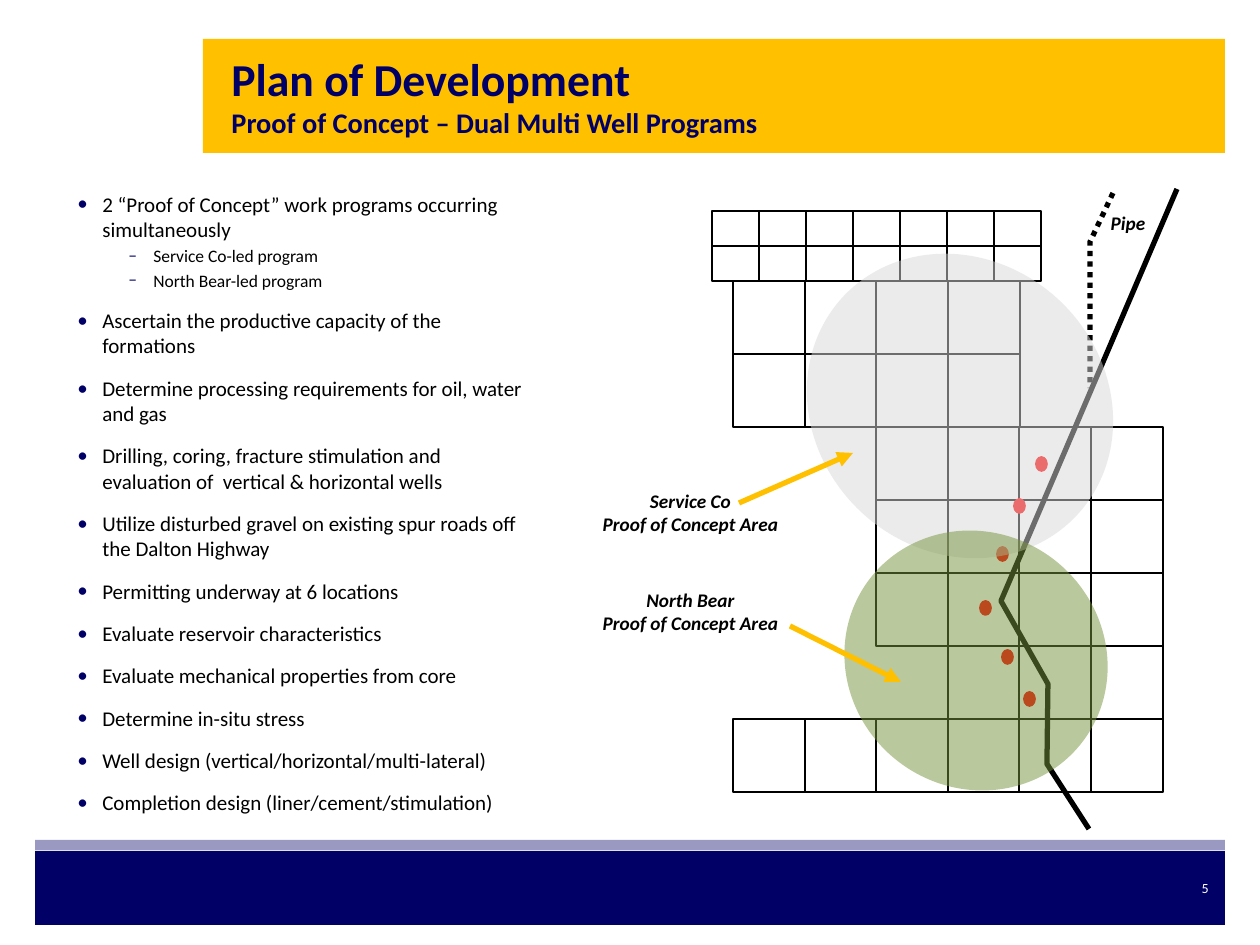
from lxml.etree import SubElement
from pptx import Presentation
from pptx.dml.color import RGBColor
from pptx.enum.dml import MSO_LINE
from pptx.enum.shapes import MSO_CONNECTOR, MSO_SHAPE
from pptx.enum.text import MSO_ANCHOR, PP_ALIGN
from pptx.oxml.ns import qn
from pptx.util import Pt

PX = 914400 / 126
NAVY = RGBColor(0x00, 0x00, 0x66)
GOLD = RGBColor(0xFF, 0xC0, 0x00)
WHITE = RGBColor(0xFF, 0xFF, 0xFF)
BLACK = RGBColor(0x00, 0x00, 0x00)
RED = RGBColor(0xFF, 0x00, 0x00)
GREY = RGBColor(0xD9, 0xD9, 0xD9)
GREEN = RGBColor(0x77, 0x93, 0x3C)

BULLETS = [
    (0, "2 “Proof of Concept” work programs occurring simultaneously"),
    (1, "Service Co-led program"),
    (1, "North Bear-led program"),
    (0, "Ascertain the productive capacity of the formations"),
    (0, "Determine processing requirements for oil, water and gas"),
    (0, "Drilling, coring, fracture stimulation and evaluation of  vertical & horizontal wells"),
    (0, "Utilize disturbed gravel on existing spur roads off the Dalton Highway"),
    (0, "Permitting underway at 6 locations"),
    (0, "Evaluate reservoir characteristics"),
    (0, "Evaluate mechanical properties from core"),
    (0, "Determine in-situ stress"),
    (0, "Well design (vertical/horizontal/multi-lateral)"),
    (0, "Completion design (liner/cement/stimulation)"),
]
LEASE_ROWS = [
    (0, 1, 2, 3), (0, 1, 2, 3), (2, 3, 4, 5), (2, 3, 4, 5),
    (2, 3, 4, 5), (3, 4, 5), (0, 1, 2, 3, 4, 5),
]
WELLS = [(1014, 499), (997, 547), (980, 601), (1002, 650), (1024, 692), (1036, 457)]
PIPELINE = [(1177, 189), (1001, 601), (1048, 684), (1047, 764), (1089, 829)]
DOTTED_ROUTE = [(1113, 193), (1090, 242), (1090, 388)]


def emu(*lengths):
    """Turn px lengths into EMU."""
    return [round(n * PX) for n in lengths]


def add_shape(shapes, kind, box, fill=None, line=None, alpha=None, rotation=0):
    """Add a preset shape with an optional fill, outline and opacity in percent."""
    sp = shapes.add_shape(kind, *emu(*box))
    sp.shadow.inherit = False
    sp.rotation = rotation
    if fill is None:
        sp.fill.background()
    else:
        sp.fill.solid()
        sp.fill.fore_color.rgb = fill
    if alpha is not None:
        color = sp.fill._xPr.find(qn("a:solidFill"))[0]
        SubElement(color, qn("a:alpha"), val=str(alpha * 1000))
    if line is None:
        sp.line.fill.background()
    else:
        sp.line.color.rgb = line
        sp.line.width = Pt(1)
    return sp


def add_route(shapes, points, dash=None):
    """Add an open black route through the points."""
    builder = shapes.build_freeform(*points[0], scale=PX)
    builder.add_line_segments(points[1:], close=False)
    sp = builder.convert_to_shape()
    sp.shadow.inherit = False
    sp.fill.background()
    sp.line.color.rgb = BLACK
    sp.line.width = Pt(3)
    if dash is not None:
        sp.line.dash_style = dash


def add_arrow(shapes, *ends):
    """Add a gold arrow from the first point to the second."""
    cxn = shapes.add_connector(MSO_CONNECTOR.STRAIGHT, *emu(*ends))
    cxn.line.color.rgb = GOLD
    cxn.line.width = Pt(3)
    SubElement(cxn.line._get_or_add_ln(), qn("a:tailEnd"), type="triangle")
    SubElement(cxn._element.spPr, qn("a:effectLst"))


def add_frame(shapes, box, anchor=MSO_ANCHOR.TOP):
    """Add a wrapping text box and return its text frame."""
    tf = shapes.add_textbox(*emu(*box)).text_frame
    tf.word_wrap = True
    tf.vertical_anchor = anchor
    return tf


def add_text(tf, text, size=12, color=BLACK, bold=False, italic=False,
             align=PP_ALIGN.LEFT, before=0, bullet=None, indent=0):
    """Write one paragraph into the frame, using its first one if still empty."""
    first = tf.paragraphs[0]
    fresh = not first.runs
    p = first if fresh else tf.add_paragraph()
    p.alignment = align
    p.space_before = Pt(0 if fresh else before)
    if bullet:
        pPr = p._p.get_or_add_pPr()
        left, hang = emu(indent, 25)
        pPr.set("marL", str(left))
        pPr.set("indent", str(-hang))
        SubElement(SubElement(pPr, qn("a:buClr")), qn("a:srgbClr"), val=str(NAVY))
        SubElement(pPr, qn("a:buFont"), typeface="Calibri")
        SubElement(pPr, qn("a:buChar"), char=bullet)
    r = p.add_run()
    r.text = text
    font = r.font
    font.name, font.size = "Calibri", Pt(size)
    font.bold, font.italic = bold, italic
    font.color.rgb = color


def add_label(shapes, box, *lines):
    """Add a centred bold italic map label."""
    tf = add_frame(shapes, box)
    for line in lines:
        add_text(tf, line, size=11, bold=True, italic=True, align=PP_ALIGN.CENTER)


def add_bands(shapes):
    """Add the title band, the footer bands and their text."""
    add_shape(shapes, MSO_SHAPE.RECTANGLE, (35, 840, 1190, 10), NAVY, alpha=40)
    add_shape(shapes, MSO_SHAPE.RECTANGLE, (35, 851, 1190, 74), NAVY)
    add_shape(shapes, MSO_SHAPE.RECTANGLE, (203, 39, 1022, 114), GOLD)
    number = add_frame(shapes, (927, 863, 294, 50), MSO_ANCHOR.MIDDLE)
    add_text(number, "5", size=8, color=WHITE, align=PP_ALIGN.RIGHT)
    title = add_frame(shapes, (219, 58, 974, 74), MSO_ANCHOR.MIDDLE)
    add_text(title, "Plan of Development", size=26.1, color=NAVY, bold=True)
    add_text(title, "Proof of Concept – Dual Multi Well Programs", size=16.2,
             color=NAVY, bold=True)


def add_bullets(shapes):
    """Add the two-level bullet list."""
    tf = add_frame(shapes, (52, 185, 490, 645))
    for level, text in BULLETS:
        if level:
            add_text(tf, text, size=10, before=2, bullet="–", indent=89)
        else:
            add_text(tf, text, before=9.8, bullet="•", indent=38)


def add_map(shapes):
    """Add the lease grid, pipeline routes, wells and concept areas."""
    for row, columns in enumerate(LEASE_ROWS):
        for column in columns:
            box = (733 + round(71.6 * column), 281 + 73 * row, 72, 73)
            add_shape(shapes, MSO_SHAPE.RECTANGLE, box,
                      None if column == 3 else WHITE, BLACK)
    add_route(shapes, PIPELINE)
    add_route(shapes, DOTTED_ROUTE, MSO_LINE.ROUND_DOT)
    add_label(shapes, (1094, 205, 68, 37), "Pipe")
    for x, y in WELLS:
        add_shape(shapes, MSO_SHAPE.OVAL, (x, y, 11, 14), RED, RED)
    north_leases = shapes.add_group_shape().shapes
    for y in (246, 211):
        for column in range(7):
            add_shape(north_leases, MSO_SHAPE.RECTANGLE,
                      (712 + 47 * column, y, 47, 35), WHITE, BLACK)
    add_shape(shapes, MSO_SHAPE.OVAL, (800, 261, 320, 290), GREY, alpha=50, rotation=43.3)
    add_shape(shapes, MSO_SHAPE.OVAL, (842, 533, 268, 255), GREEN, alpha=50, rotation=37.6)
    add_label(shapes, (581, 483, 219, 59), "Service Co", "Proof of Concept Area")
    add_label(shapes, (581, 582, 219, 59), "North Bear", "Proof of Concept Area")
    add_arrow(shapes, 739, 503, 853, 453)
    add_arrow(shapes, 790, 626, 901, 682)


def main():
    """Build the slide and save it."""
    prs = Presentation()
    prs.slide_width, prs.slide_height = emu(1260, 945)
    shapes = prs.slides.add_slide(prs.slide_layouts[6]).shapes
    add_bands(shapes)
    add_bullets(shapes)
    add_map(shapes)
    prs.save("out.pptx")


if __name__ == "__main__":
    main()
